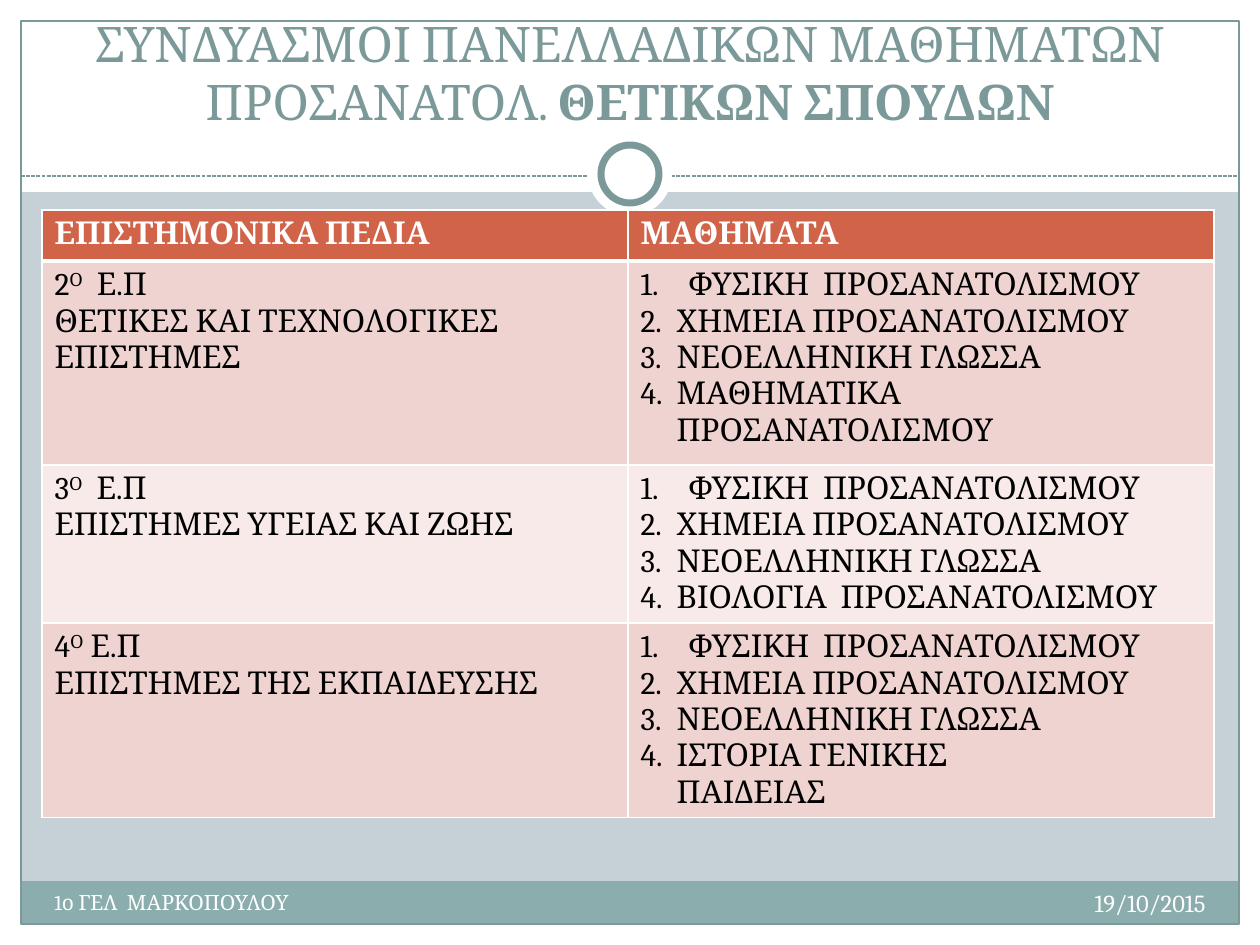
from lxml import etree
from pptx import Presentation
from pptx.dml.color import RGBColor
from pptx.enum.dml import MSO_LINE
from pptx.enum.shapes import MSO_CONNECTOR, MSO_SHAPE
from pptx.enum.text import MSO_ANCHOR, MSO_AUTO_SIZE, PP_ALIGN
from pptx.oxml.ns import qn
from pptx.util import Pt

RECT, OVAL = MSO_SHAPE.RECTANGLE, MSO_SHAPE.OVAL
STRAIGHT, DASH = MSO_CONNECTOR.STRAIGHT, MSO_LINE.SQUARE_DOT
LEFT, CENTER, RIGHT = PP_ALIGN.LEFT, PP_ALIGN.CENTER, PP_ALIGN.RIGHT
BOTTOM, NO_FIT = MSO_ANCHOR.BOTTOM, MSO_AUTO_SIZE.NONE

WHITE = RGBColor(0xFF, 0xFF, 0xFF)
BLACK = RGBColor(0x00, 0x00, 0x00)
BACKDROP = RGBColor(0xC5, 0xD1, 0xD7)
TEAL = RGBColor(0x7C, 0x99, 0x9A)
FOOTER_BAND = RGBColor(0x8C, 0xAD, 0xAE)
HEADER_FILL = RGBColor(0xD1, 0x63, 0x49)
ROW_FILLS = RGBColor(0xEE, 0xD3, 0xD0), RGBColor(0xF7, 0xEA, 0xE9)

WIDTH, HEIGHT = 1260, 945
EMU_PER_PX = 914400 / 126
EDGE = 21

HEADINGS = "ΕΠΙΣΤΗΜΟΝΙΚΑ ΠΕΔΙΑ", "ΜΑΘΗΜΑΤΑ"
COMMON_SUBJECTS = ["ΦΥΣΙΚΗ  ΠΡΟΣΑΝΑΤΟΛΙΣΜΟΥ", "ΧΗΜΕΙΑ ΠΡΟΣΑΝΑΤΟΛΙΣΜΟΥ", "ΝΕΟΕΛΛΗΝΙΚΗ ΓΛΩΣΣΑ"]
# number, text after the raised letter, field name, fourth subject by line
FIELDS = [
    ("2", "  Ε.Π", "ΘΕΤΙΚΕΣ ΚΑΙ ΤΕΧΝΟΛΟΓΙΚΕΣ ΕΠΙΣΤΗΜΕΣ", ["ΜΑΘΗΜΑΤΙΚΑ", "ΠΡΟΣΑΝΑΤΟΛΙΣΜΟΥ"]),
    ("3", "  Ε.Π", "ΕΠΙΣΤΗΜΕΣ ΥΓΕΙΑΣ ΚΑΙ ΖΩΗΣ", ["ΒΙΟΛΟΓΙΑ  ΠΡΟΣΑΝΑΤΟΛΙΣΜΟΥ"]),
    ("4", " Ε.Π", "ΕΠΙΣΤΗΜΕΣ ΤΗΣ ΕΚΠΑΙΔΕΥΣΗΣ", ["ΙΣΤΟΡΙΑ ΓΕΝΙΚΗΣ", "ΠΑΙΔΕΙΑΣ"]),
]
ROW_HEIGHTS = [51, 204, 158, 194]
COLUMN_WIDTH = 586


def px(length):
    return round(length * EMU_PER_PX)


def add_text(paragraph, text, size=18, color=BLACK, bold=False, raised=False, align=LEFT):
    run = paragraph.add_run()
    run.text = text
    run.font.name = "Cambria"
    run.font.size = Pt(size)
    run.font.bold = bold
    run.font.color.rgb = color
    if raised:
        run.font._element.set("baseline", "30000")
    paragraph.alignment = align


def number_paragraph(paragraph, number, indent):
    """Give the paragraph a hanging automatic number."""
    properties = paragraph._p.get_or_add_pPr()
    properties.set("marL", str(px(indent)))
    properties.set("indent", str(-px(indent)))
    etree.SubElement(properties, qn("a:buFont"), typeface="+mj-lt")
    etree.SubElement(properties, qn("a:buAutoNum"), type="arabicPeriod", startAt=str(number))


def add_borders(cell, top, bottom):
    """Draw white cell borders; top and bottom are widths in points."""
    properties = cell._tc.get_or_add_tcPr()
    for side, width in (("L", 1), ("R", 1), ("T", top), ("B", bottom)):
        border = etree.SubElement(properties, qn(f"a:ln{side}"), w=str(Pt(width)))
        fill = etree.SubElement(border, qn("a:solidFill"))
        etree.SubElement(fill, qn("a:srgbClr"), val=str(WHITE))


class SlideBuilder:
    """Holds the slide and adds styled elements, with lengths in px."""

    def __init__(self, slide):
        self.slide = slide
        slide.background.fill.solid()
        slide.background.fill.fore_color.rgb = BACKDROP

    def shape(self, kind, x, y, w, h, fill=None, line=None, line_width=0.75):
        shape = self.slide.shapes.add_shape(kind, px(x), px(y), px(w), px(h))
        shape.shadow.inherit = False
        if fill is None:
            shape.fill.background()
        else:
            shape.fill.solid()
            shape.fill.fore_color.rgb = fill
        if line is None:
            shape.line.fill.background()
        else:
            shape.line.color.rgb = line
            shape.line.width = Pt(line_width)

    def dashed_rule(self, x1, x2, y):
        rule = self.slide.shapes.add_connector(STRAIGHT, px(x1), px(y), px(x2), px(y))
        rule.line.color.rgb = TEAL
        rule.line.width = Pt(0.75)
        rule.line.dash_style = DASH
        etree.SubElement(rule._element.spPr, qn("a:effectLst"))

    def title(self, x, y, w, h, plain, strong):
        title = self.slide.shapes.title
        title.left, title.top, title.width, title.height = px(x), px(y), px(w), px(h)
        frame = title.text_frame
        frame.word_wrap = True
        frame.auto_size = NO_FIT
        frame.vertical_anchor = BOTTOM
        for text, bold in ((plain, False), (strong, True)):
            add_text(frame.paragraphs[0], text, size=28, color=TEAL, bold=bold, align=CENTER)
        # The placeholder comes first in the tree; bring it above the white bands
        title._element.getparent().append(title._element)

    def label(self, x, y, w, h, text, **text_format):
        frame = self.slide.shapes.add_textbox(px(x), px(y), px(w), px(h)).text_frame
        frame.word_wrap = True
        add_text(frame.paragraphs[0], text, color=WHITE, **text_format)

    def fields_table(self, x, y):
        table = self.slide.shapes.add_table(
            len(ROW_HEIGHTS), len(HEADINGS), px(x), px(y),
            px(COLUMN_WIDTH * len(HEADINGS)), px(sum(ROW_HEIGHTS))).table
        table.horz_banding = False
        for column in table.columns:
            column.width = px(COLUMN_WIDTH)
        for index, (row, height) in enumerate(zip(table.rows, ROW_HEIGHTS)):
            row.height = px(height)
            for cell in row.cells:
                add_borders(cell, top=3 if index == 1 else 1, bottom=3 if index == 0 else 1)
                cell.fill.solid()
                cell.fill.fore_color.rgb = ROW_FILLS[(index - 1) % 2] if index else HEADER_FILL
        for cell, heading in zip(table.rows[0].cells, HEADINGS):
            add_text(cell.text_frame.paragraphs[0], heading, color=WHITE, bold=True)
        for index, (number, suffix, field, last_subject) in enumerate(FIELDS, start=1):
            field_frame = table.cell(index, 0).text_frame
            heading = field_frame.paragraphs[0]
            add_text(heading, number)
            add_text(heading, "Ο", raised=True)
            add_text(heading, suffix)
            add_text(field_frame.add_paragraph(), field)
            self.subjects(table.cell(index, 1).text_frame, last_subject)

    def subjects(self, frame, last_subject):
        """Number the common subjects, then the last one with its line breaks."""
        items = [[subject] for subject in COMMON_SUBJECTS] + [last_subject]
        for number, lines in enumerate(items, start=1):
            paragraph = frame.paragraphs[0] if number == 1 else frame.add_paragraph()
            number_paragraph(paragraph, number, indent=48 if number == 1 else 36)
            for position, line in enumerate(lines):
                if position:
                    paragraph.add_line_break()
                add_text(paragraph, line)


def main():
    presentation = Presentation()
    presentation.slide_width, presentation.slide_height = px(WIDTH), px(HEIGHT)
    builder = SlideBuilder(presentation.slides.add_slide(presentation.slide_layouts[5]))

    inner_width, inner_height = WIDTH - 2 * EDGE, HEIGHT - 2 * EDGE
    for margin in ((0, HEIGHT - EDGE, WIDTH, EDGE), (0, 0, WIDTH, 192),
                   (0, 0, EDGE, HEIGHT), (WIDTH - EDGE, 0, EDGE, HEIGHT)):
        builder.shape(RECT, *margin, fill=WHITE)
    builder.shape(RECT, EDGE, 881, inner_width, 43, fill=FOOTER_BAND)
    builder.shape(RECT, EDGE, EDGE, inner_width, inner_height, line=TEAL)
    builder.dashed_rule(EDGE, WIDTH - EDGE, 176)
    builder.shape(OVAL, 588, 132, 84, 84, fill=WHITE)
    builder.shape(OVAL, 601, 145, 58, 58, fill=WHITE, line=TEAL, line_width=4)

    builder.title(42, 32, 1176, 105,
                  "ΣΥΝΔΥΑΣΜΟΙ ΠΑΝΕΛΛΑΔΙΚΩΝ ΜΑΘΗΜΑΤΩΝ ΠΡΟΣΑΝΑΤΟΛ. ", "ΘΕΤΙΚΩΝ ΣΠΟΥΔΩΝ")
    builder.fields_table(42, 210)
    builder.label(798, 882, 420, 50, "19/10/2015", size=14, align=RIGHT)
    builder.label(42, 883, 494, 50, "1ο ΓΕΛ  ΜΑΡΚΟΠΟΥΛΟΥ", size=12)
    presentation.save("out.pptx")


if __name__ == "__main__":
    main()
